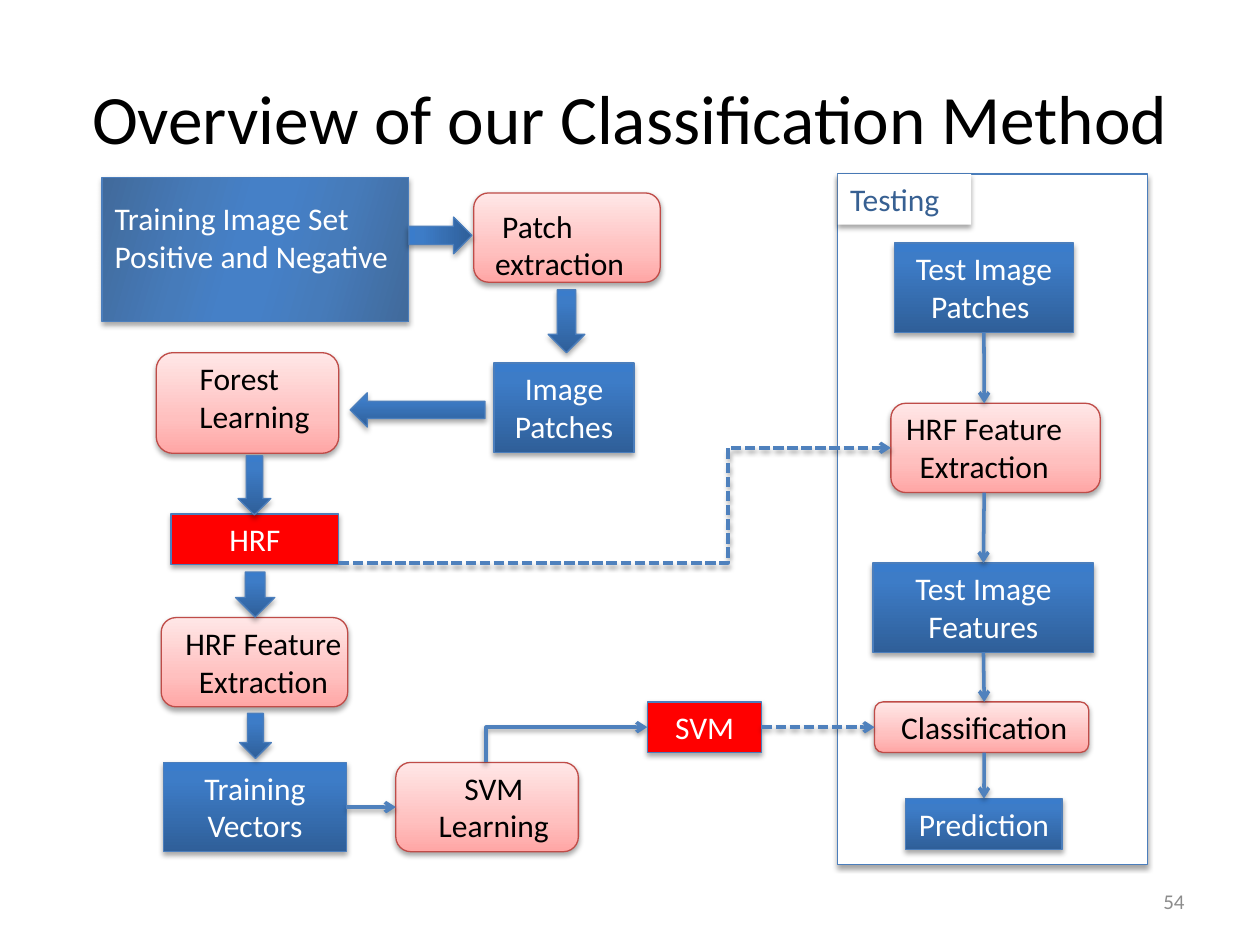
from lxml.etree import SubElement as Sub
from pptx import Presentation
from pptx.dml.color import RGBColor
from pptx.enum.dml import MSO_LINE
from pptx.enum.shapes import MSO_CONNECTOR as CON, MSO_SHAPE as SHP
from pptx.enum.text import MSO_ANCHOR as ANCHOR, PP_ALIGN as ALIGN
from pptx.oxml.ns import qn
from pptx.util import Cm, Pt

rgb = RGBColor.from_string
BLUE = [(0, "2F5F99"), (80, "3D7CC7"), (100, "3A7CCB")]
PINK = [(0, "FFA6A5"), (35, "FFC0BF"), (100, "FFE7E7")]
STEEL = [(0, "416A9B"), (30, "467BBA"), (45, "4580C7"),
         (55, "4580C7"), (73, "467BBA"), (100, "416A9B")]
EDGE, PINK_EDGE, LINK = "4B7EBC", "BF4C48", "4F81BD"

prs = Presentation()
prs.slide_width, prs.slide_height = Cm(25.4), Cm(19.05)
s = prs.slides.add_slide(prs.slide_layouts[5])


def add_shadow(sp, dist=1.8, alpha=35):
    effects = Sub(sp.element.spPr, qn("a:effectLst"))
    shadow = Sub(effects, qn("a:outerShdw"), blurRad=str(Pt(3.1)), dist=str(Pt(dist)),
                 dir="5400000", rotWithShape="0")
    clr = Sub(shadow, qn("a:srgbClr"), val="000000")
    Sub(clr, qn("a:alpha"), val=str(alpha * 1000))


def add_box(text, x, y, w, h, kind=None, fill=None, angle=90, line=EDGE, size=18,
            color="FFFFFF", align=ALIGN.CENTER, anchor=ANCHOR.TOP, first_indent=0):
    at = Cm(x), Cm(y), Cm(w), Cm(h)
    sp = s.shapes.add_shape(kind, *at) if kind else s.shapes.add_textbox(*at)
    if isinstance(fill, str):
        sp.fill.solid()
        sp.fill.fore_color.rgb = rgb(fill)
    elif fill:
        sp.fill.gradient()
        sp.fill.gradient_angle = angle
        stops = sp.element.spPr.find(".//" + qn("a:gsLst"))
        for stop in list(stops):
            stops.remove(stop)
        for pos, tone in fill:
            Sub(Sub(stops, qn("a:gs"), pos=str(pos * 1000)), qn("a:srgbClr"), val=tone)
    if kind:
        if line:
            sp.line.color.rgb = rgb(line)
            sp.line.width = Pt(0.75)
        else:
            sp.line.fill.background()
        add_shadow(sp)
    tf = sp.text_frame
    tf.word_wrap = True
    tf.vertical_anchor = anchor
    for i, row in enumerate(text.split("\n") if text else []):
        p = tf.add_paragraph() if i else tf.paragraphs[0]
        p.alignment = align
        p._p.get_or_add_pPr().set("marR", str(Cm(0 if i else first_indent)))
        r = p.add_run()
        r.text = row
        r.font.name, r.font.size, r.font.color.rgb = "Calibri", Pt(size), rgb(color)
    return sp


title = s.shapes.title
title.left, title.top, title.width, title.height = Cm(1.27), Cm(0.76), Cm(22.86), Cm(3.18)
title.text_frame.vertical_anchor = ANCHOR.MIDDLE
p = title.text_frame.paragraphs[0]
p.alignment = ALIGN.CENTER
r = p.add_run()
r.text = "Overview of our Classification Method"
r.font.name, r.font.size, r.font.color.rgb = "Calibri", Pt(39.6), rgb("000000")

add_box("", 16.89, 3.51, 6.25, 13.92, SHP.RECTANGLE, "FFFFFF")
add_box("Testing", 16.89, 3.51, 2.69, 1.02, SHP.RECTANGLE, "FFFFFF", line=None,
        color="376092", align=ALIGN.LEFT)
add_box("", 2.06, 3.58, 6.17, 2.9, SHP.RECTANGLE, STEEL, angle=344)
add_box("Training Image Set\nPositive and Negative", 2.06, 3.89, 6.17, 1.22, align=ALIGN.LEFT)

data = {}
for text, x, y, w, h, fill in [
    ("SVM", 13.06, 14.15, 2.29, 1.02, "FF0000"),
    ("HRF", 3.45, 10.36, 3.38, 1.02, "FF0000"),
    ("Image Patches", 9.96, 7.32, 2.82, 1.8, BLUE),
    ("Training Vectors", 3.3, 15.37, 3.68, 1.8, BLUE),
    ("Test Image Patches ", 18.03, 4.9, 3.61, 1.8, BLUE),
    ("Test Image Features", 17.6, 11.35, 4.45, 1.8, BLUE),
    ("Prediction", 18.26, 16.1, 3.15, 1.02, BLUE),
]:
    data[text.strip()] = add_box(text, x, y, w, h, SHP.RECTANGLE, fill)

steps, labels = {}, {}
for name, text, x, y, w, h, text_x, text_y, text_w, indent in [
    ("patch", "Patch\nextraction", 9.55, 3.89, 3.76, 1.8, 9.5, 4.04, 3.56, 0.89),
    ("forest", "Forest\nLearning", 3.15, 7.11, 3.68, 2.03, 3.15, 7.11, 3.96, 0.61),
    ("train", "HRF Feature Extraction", 3.25, 12.45, 3.76, 1.8, 3.43, 12.45, 3.76, 0),
    ("svm", "SVM Learning", 7.98, 15.37, 3.68, 1.8, 8.56, 15.37, 2.79, 0),
    ("test", "HRF Feature Extraction", 17.96, 8.13, 4.22, 1.8, 17.39, 8.13, 4.9, 0),
    ("classify", "Classification", 17.63, 14.15, 4.32, 1.02, 17.63, 14.15, 4.42, 0),
]:
    steps[name] = add_box("", x, y, w, h, SHP.FLOWCHART_ALTERNATE_PROCESS, PINK, line=PINK_EDGE)
    labels[name] = add_box(text, text_x, text_y, text_w, h, color="000000", first_indent=indent)

for kind, x, y, w, h, turn in [
    (SHP.DOWN_ARROW, 8.51, 4.11, 0.74, 1.27, 270),
    (SHP.DOWN_ARROW, 11.05, 5.84, 0.74, 1.27, 0),
    (SHP.LEFT_ARROW, 7.06, 7.92, 2.72, 0.69, 0),
    (SHP.DOWN_ARROW, 4.8, 9.19, 0.66, 1.19, 0),
    (SHP.DOWN_ARROW, 4.75, 11.53, 0.79, 0.91, 0),
    (SHP.DOWN_ARROW, 4.83, 14.38, 0.64, 0.91, 0),
]:
    add_box("", x, y, w, h, kind, BLUE).rotation = turn

for kind, start, start_side, end, end_side, dashed in [
    (CON.STRAIGHT, data["Training Vectors"], 3, steps["svm"], 1, False),
    (CON.STRAIGHT, data["SVM"], 3, steps["classify"], 1, True),
    (CON.STRAIGHT, data["Test Image Patches"], 2, labels["test"], 0, False),
    (CON.STRAIGHT, labels["test"], 2, data["Test Image Features"], 0, False),
    (CON.STRAIGHT, data["Test Image Features"], 2, labels["classify"], 0, False),
    (CON.STRAIGHT, labels["classify"], 2, data["Prediction"], 0, False),
    (CON.ELBOW, steps["svm"], 0, data["SVM"], 1, False),
    (CON.ELBOW, None, None, steps["test"], 1, True),
]:
    c = s.shapes.add_connector(kind, Cm(6.83), Cm(11.35), Cm(17.96), Cm(9.03))
    if start:
        c.begin_connect(start, start_side)
    c.end_connect(end, end_side)
    c.line.color.rgb = rgb(LINK)
    c.line.width = Pt(2)
    if dashed:
        c.line.dash_style = MSO_LINE.SQUARE_DOT
    Sub(c.line._get_or_add_ln(), qn("a:tailEnd"), type="arrow")
    add_shadow(c, dist=1.6, alpha=38)
    if kind == CON.ELBOW:
        geom = c.element.spPr.find(qn("a:prstGeom"))
        if start:
            geom.set("prst", "bentConnector2")
            c.left, c.top, c.width, c.height = Cm(11.07), Cm(13.39), Cm(0.71), Cm(3.25)
            xfrm = c.element.spPr.find(qn("a:xfrm"))
            for key, value in (("rot", "5400000"), ("flipH", "1"), ("flipV", "1")):
                xfrm.set(key, value)
        else:
            Sub(geom.find(qn("a:avLst")), qn("a:gd"), name="adj1", fmla="val 70500")

add_box("54", 18.21, 17.65, 5.92, 1.02, size=12, color="8C8C8C", align=ALIGN.RIGHT,
        anchor=ANCHOR.MIDDLE)

prs.save("out.pptx")
